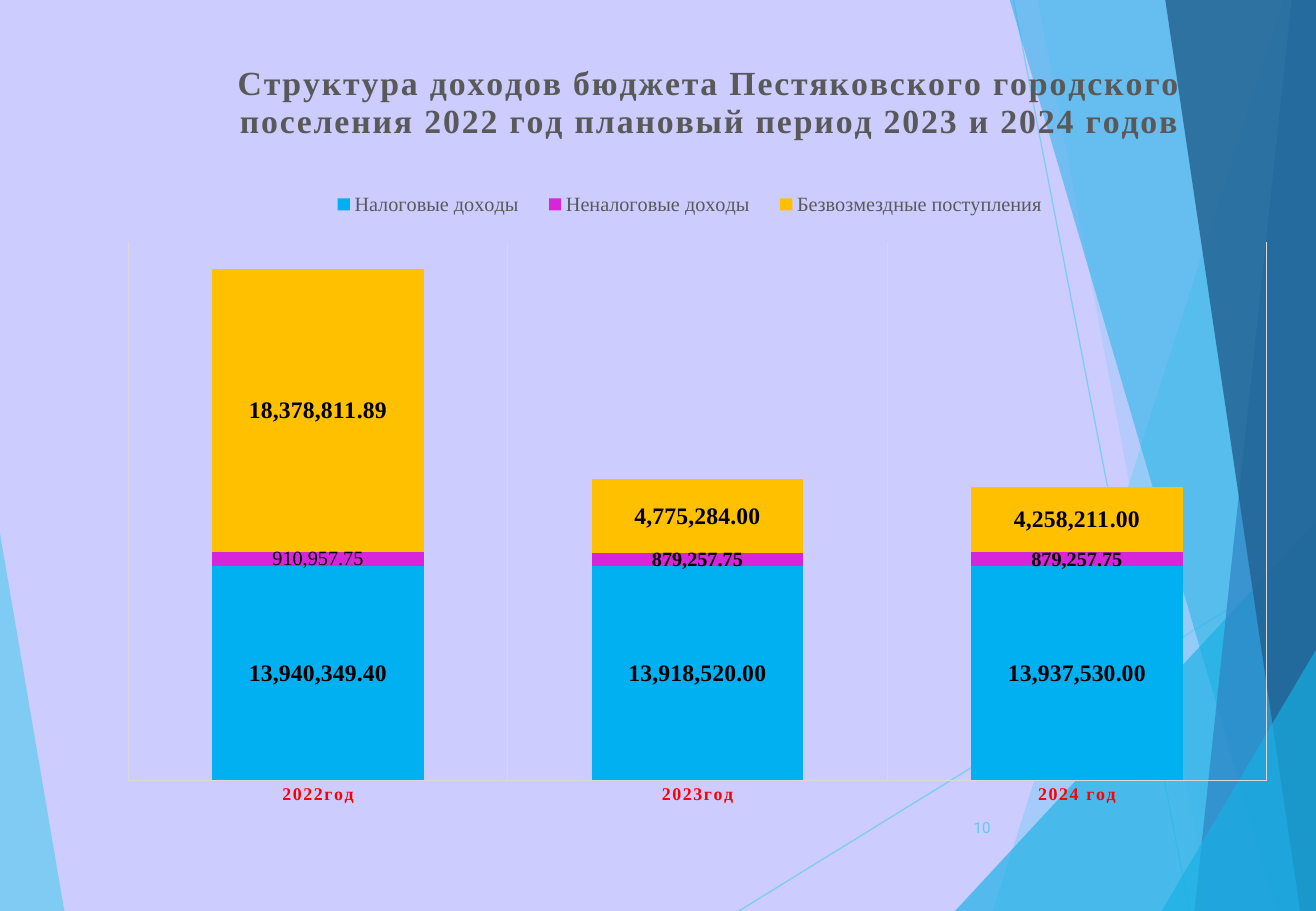
from lxml.etree import SubElement
from pptx import Presentation
from pptx.chart.data import CategoryChartData
from pptx.dml.color import RGBColor
from pptx.enum.chart import XL_CHART_TYPE as ChartType
from pptx.enum.chart import XL_LABEL_POSITION as LabelPosition
from pptx.enum.chart import XL_LEGEND_POSITION as LegendPosition
from pptx.enum.chart import XL_TICK_MARK as TickMark
from pptx.enum.shapes import MSO_CONNECTOR as Connector
from pptx.enum.text import MSO_ANCHOR as Anchor
from pptx.enum.text import PP_ALIGN as Align
from pptx.oxml import parse_xml
from pptx.oxml.ns import nsdecls, qn
from pptx.util import Inches, Pt

WIDTH, HEIGHT = 10.83, 7.5
SERIF, SANS = "Times New Roman", "Roboto"
GREY, GRID, SKY = "595959", "D9D9D9", "5FCBEF"
MONEY = "#,##0.00"

LEFT_WEDGE = ([(0, 4.39), (0.53, HEIGHT), (0, HEIGHT)], SKY, 70)
RAYS = [((6.08, HEIGHT), (WIDTH, 4.57)), ((8.34, 0), (9.79, HEIGHT))]
RIGHT_FACETS = [
    ([(10.56, 0), (8.17, HEIGHT), (WIDTH, HEIGHT), (WIDTH, 0)], SKY, 36),
    ([(8.54, 0), (9.96, HEIGHT), (WIDTH, HEIGHT), (WIDTH, 0)], SKY, 20),
    ([(7.86, HEIGHT), (WIDTH, 4.29), (WIDTH, HEIGHT)], "17B0E4", 66),
    ([(8.31, 0), (10.51, HEIGHT), (WIDTH, HEIGHT), (WIDTH, 0)], "17B0E4", 50),
    ([(10.63, 0), (9.83, HEIGHT), (WIDTH, HEIGHT), (WIDTH, 0)], "2E83C3", 70),
    ([(9.59, 0), (10.7, HEIGHT), (WIDTH, HEIGHT), (WIDTH, 0)], "226292", 82),
    ([(9.56, HEIGHT), (WIDTH, 5.35), (WIDTH, HEIGHT)], "17B0E4", 66),
]
YEARS = ["2022год", "2023год", "2024 год"]
INCOMES = [
    ("Налоговые доходы", [13940349.4, 13918520, 13937530], "00B0F0", 14),
    ("Неналоговые доходы", [910957.75, 879257.75, 879257.75], "D626DA", 12),
    ("Безвозмездные поступления", [18378811.89, 4775284, 4258211], "FFC000", 14),
]
TITLE = ("Структура доходов бюджета Пестяковского городского поселения "
         "2022 год плановый период 2023 и 2024 годов")


def paint(fill, colour, opacity=100):
    """Give a fill a solid colour with an opacity in percent."""
    fill.solid()
    fill.fore_color.rgb = RGBColor.from_string(colour)
    if opacity < 100:
        rgb = fill._xPr.xpath("a:solidFill/a:srgbClr")[0]
        SubElement(rgb, qn("a:alpha")).set("val", str(opacity * 1000))


def style(font, name, size, colour, bold=False, spacing=0):
    """Set typeface, size, colour, weight and letter spacing of a font."""
    font.name, font.size, font.bold = name, Pt(size), bold
    paint(font.fill, colour)
    if spacing:
        font._rPr.set("spc", str(spacing * 100))


def add_facet(slide, corners, colour, opacity):
    """Draw one translucent polygon of the backdrop."""
    points = [(Inches(x), Inches(y)) for x, y in corners]
    builder = slide.shapes.build_freeform(*points[0])
    builder.add_line_segments(points[1:], close=True)
    facet = builder.convert_to_shape()
    facet.shadow.inherit = False
    paint(facet.fill, colour, opacity)
    facet.line.fill.background()


def add_ray(slide, start, end):
    """Draw one thin line of the backdrop."""
    ray = slide.shapes.add_connector(Connector.STRAIGHT, *map(Inches, start + end))
    ray.line.width = Pt(0.75)
    paint(ray.line.fill, SKY, 70)
    SubElement(ray._element.spPr, qn("a:effectLst"))


def place(part, index, x, y, width=None, height=None, inner=False):
    """Put a chart part at fractions of the chart area."""
    for layout in part.findall(qn("c:layout")):
        part.remove(layout)
    settings = [("layoutTarget", "inner")] if inner else []
    settings += [("xMode", "edge"), ("yMode", "edge"), ("x", x), ("y", y)]
    if width:
        settings += [("w", width), ("h", height)]
    inside = "".join(f'<c:{tag} val="{value}"/>' for tag, value in settings)
    part.insert(index, parse_xml(
        f'<c:layout {nsdecls("c")}><c:manualLayout>{inside}</c:manualLayout></c:layout>'))


def format_axes(chart):
    """Format the year axis with its gridlines and hide the money axis."""
    years, money = chart.category_axis, chart.value_axis
    years.major_tick_mark = years.minor_tick_mark = TickMark.NONE
    years.has_major_gridlines = True
    for line in (years.format.line, years.major_gridlines.format.line):
        line.width = Pt(0.75)
        paint(line.fill, GRID)
    style(years.tick_labels.font, SERIF, 10.6, "FF0000", True, 1)
    money.minimum_scale, money.maximum_scale = 0, 35000000
    money.has_major_gridlines = False
    money.visible = False


def format_series(series, colour, label_size):
    """Colour a series and label its values."""
    paint(series.format.fill, colour)
    series.invert_if_negative = False
    labels = series.data_labels
    labels.show_value = True
    labels.number_format, labels.number_format_is_linked = MONEY, False
    labels.position = LabelPosition.CENTER
    style(labels.font, SERIF, label_size, "000000", True)


def add_income_chart(slide):
    """Add the stacked columns of budget income with title and legend."""
    table = CategoryChartData(number_format=MONEY)
    table.categories = YEARS
    for name, values, _, _ in INCOMES:
        table.add_series(name, values)
    chart = slide.shapes.add_chart(
        ChartType.COLUMN_STACKED, Inches(0.49), Inches(0.2),
        Inches(10.48), Inches(7.06), table).chart
    style(chart.font, SANS, 10, "000000")
    plot = chart.plots[0]
    plot.gap_width, plot.overlap, plot.vary_by_categories = 79, 100, False
    for series, (_, _, colour, label_size) in zip(plot.series, INCOMES):
        format_series(series, colour, label_size)
    first_label = plot.series[1].points[0].data_label
    caption = first_label.text_frame.paragraphs[0].add_run()
    caption.text = "910,957.75"
    style(caption.font, SERIF, 12, "000000")
    first_label.position = LabelPosition.CENTER
    format_axes(chart)
    place(chart._chartSpace.xpath("c:chart/c:plotArea")[0], 0,
          0.054, 0.254, 0.894, 0.628, inner=True)

    chart.has_title = True
    heading = chart.chart_title.text_frame.paragraphs[0].add_run()
    heading.text = TITLE
    style(heading.font, SERIF, 20, GREY, True, 1)
    place(chart.chart_title._element, 1, 0.135, 0.036)

    chart.has_legend = True
    chart.legend.position = LegendPosition.TOP
    chart.legend.include_in_layout = False
    style(chart.legend.font, SERIF, 12, GREY)
    place(chart.legend._element, 1, 0.2, 0.19, 0.59, 0.04)


def add_page_number(slide, number):
    """Add the page number at the lower right."""
    box = slide.shapes.add_textbox(
        Inches(7.64), Inches(6.61), Inches(0.61), Inches(0.4))
    frame = box.text_frame
    frame.word_wrap, frame.vertical_anchor = True, Anchor.MIDDLE
    paragraph = frame.paragraphs[0]
    paragraph.alignment = Align.RIGHT
    run = paragraph.add_run()
    run.text = number
    style(run.font, SANS, 9, SKY)


def main():
    """Build the slide and save it."""
    deck = Presentation()
    deck.slide_width, deck.slide_height = Inches(WIDTH), Inches(HEIGHT)
    slide = deck.slides.add_slide(deck.slide_layouts.get_by_name("Blank"))
    paint(slide.background.fill, "CCCCFF")
    add_facet(slide, *LEFT_WEDGE)
    for ray in RAYS:
        add_ray(slide, *ray)
    for facet in RIGHT_FACETS:
        add_facet(slide, *facet)
    add_income_chart(slide)
    add_page_number(slide, "10")
    deck.save("out.pptx")


if __name__ == "__main__":
    main()
